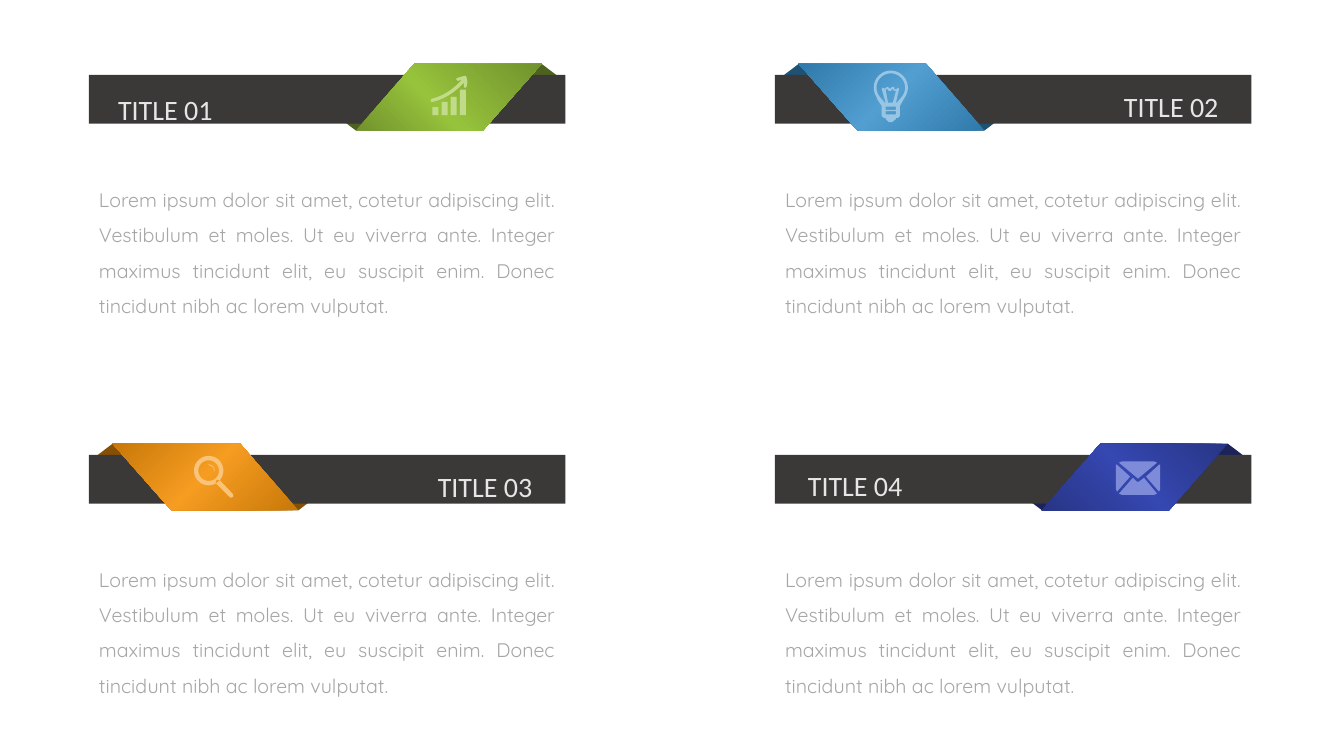
"""Build a slide of four titled banners with folded ribbons, icons and text."""
from copy import deepcopy
from dataclasses import dataclass
from math import cos, radians, sin

from lxml.etree import SubElement
from pptx import Presentation
from pptx.dml.color import RGBColor
from pptx.enum.shapes import MSO_SHAPE
from pptx.enum.text import MSO_ANCHOR, MSO_AUTO_SIZE, PP_ALIGN
from pptx.oxml.ns import qn
from pptx.util import Cm, Pt

Point = tuple[float, float]
Contour = list[Point]

LOREM = ("Lorem ipsum dolor sit amet, cotetur adipiscing elit. Vestibulum et moles. "
         "Ut eu viverra ante. Integer maximus tincidunt elit, eu suscipit enim. "
         "Donec tincidunt nibh ac lorem vulputat.")
COLUMNS = (2.24, 19.53)
ROWS = (1.89, 11.46)
BAR_W, BAR_H = 12.01, 1.23
RIBBON = [(0.6, -0.28), (3.81, -0.28), (5.28, 1.4), (2.08, 1.4)]
UPPER_FOLD = [(0.6, -0.28), (1.34, -0.28), (0.96, 0), (0.23, 0)]
LOWER_FOLD = [(5.88 - x, 1.12 - y) for x, y in UPPER_FOLD]


def arc(cx: float, cy: float, r: float, start: int, end: int) -> Contour:
    """Return points along a circular arc, clockwise when end exceeds start."""
    step = 6 if end > start else -6
    return [(cx + r * cos(radians(a)), cy + r * sin(radians(a)))
            for a in range(start, end + step, step)]


def curve(start: Point, control: Point, end: Point) -> Contour:
    """Return points along a quadratic curve."""
    ts = [i / 10 for i in range(11)]
    return [tuple((1 - t) ** 2 * a + 2 * t * (1 - t) * b + t * t * c
                  for a, b, c in zip(start, control, end)) for t in ts]


def box(x: float, y: float, w: float, h: float) -> Contour:
    """Return the corners of a rectangle."""
    return [(x, y), (x, y + h), (x + w, y + h), (x + w, y)]


CHART = [box(0.05 + 0.23 * i, 0.99 - h, 0.15, h)
         for i, h in enumerate((0.2, 0.33, 0.46, 0.64))] + [
    [(0.91, 0.05), (0.89, 0), (0.86, 0), (0.69, 0.05), (0.64, 0.08), (0.69, 0.13)]
    + curve((0.79, 0.1), (0.45, 0.48), (0.03, 0.58))
    + [(0, 0.63), (0.03, 0.66)]
    + curve((0.05, 0.66), (0.48, 0.56), (0.84, 0.18))
    + [(0.84, 0.23), (0.84, 0.3), (0.89, 0.3), (0.91, 0.28), (0.93, 0.15)]]
BULB = [
    arc(0.43, 0.43, 0.43, 144, 396)
    + [(0.76, 0.71), (0.66, 0.89), (0.66, 1.14), (0.61, 1.19), (0.56, 1.19),
       (0.56, 1.22), (0.46, 1.3), (0.38, 1.3), (0.3, 1.22), (0.3, 1.19),
       (0.25, 1.19), (0.2, 1.14), (0.2, 0.89), (0.08, 0.71)],
    arc(0.43, 0.43, 0.36, 396, 144)
    + [(0.15, 0.66), (0.28, 0.81), (0.3, 0.81), (0.2, 0.46), (0.23, 0.43),
       (0.28, 0.46), (0.33, 0.41), (0.38, 0.43), (0.42, 0.46), (0.46, 0.41),
       (0.51, 0.41), (0.53, 0.48), (0.58, 0.46), (0.61, 0.43), (0.64, 0.46),
       (0.56, 0.81), (0.58, 0.81)],
    [(0.36, 0.81), (0.48, 0.81), (0.56, 0.51), (0.51, 0.51), (0.48, 0.46),
     (0.43, 0.51), (0.38, 0.51), (0.33, 0.46), (0.3, 0.48)],
    box(0.3, 0.91, 0.26, 0.08), box(0.3, 1.02, 0.26, 0.08)]
LENS = [
    arc(0.37, 0.37, 0.37, 0, 354), arc(0.37, 0.37, 0.26, 354, 0),
    [(0.54, 0.68), (0.56, 0.61), (0.64, 0.6), (0.98, 0.96), (0.99, 1.02),
     (0.95, 1.05), (0.9, 1.04)],
    curve((0.34, 0.21), (0.53, 0.22), (0.52, 0.4)) + [(0.48, 0.28)]]
SIDE = [(1.12, 0.08), (1.12, 0.69), (1.09, 0.76), (0.76, 0.38), (1.09, 0.08)]
ENVELOPE = [
    SIDE, [(1.12 - x, y) for x, y in SIDE],
    [(0.56, 0.43), (1.04, 0.03), (0.97, 0), (0.15, 0), (0.08, 0.03)],
    [(0.71, 0.41), (0.58, 0.51), (0.53, 0.51), (0.43, 0.41), (0.08, 0.81),
     (0.15, 0.84), (0.97, 0.84), (1.04, 0.81)]]


@dataclass
class Panel:
    """Describe one banner, with title and icon placed relative to its bar."""
    title: str
    column: int
    row: int
    ribbon_right: bool
    title_at: Point
    edge: str
    middle: str
    middle_at: float
    angle: int
    fold: str
    icon: list[Contour]
    icon_at: Point
    icon_color: str


PANELS = [
    Panel("TITLE 01", 0, 0, True, (0.48, 0.24), "71922D", "97C33C", 0.42, 45,
          "4C621E", CHART, (8.61, 0.02), "C1DB8A"),
    Panel("TITLE 02", 1, 0, False, (4.57, 0.17), "2F7AAB", "539ED0", 0.51, 135,
          "1F5172", BULB, (2.49, -0.11), "98C5E3"),
    Panel("TITLE 03", 0, 1, False, (4.57, 0.17), "C87809", "F59C21", 0.51, 135,
          "855006", LENS, (2.65, 0.03), "F9C47A"),
    Panel("TITLE 04", 1, 1, True, (0.58, 0.15), "283585", "3547B1", 0.51, 225,
          "1B2358", ENVELOPE, (8.59, 0.17), "7E8BD8"),
]


def rgb(color: str) -> RGBColor:
    """Turn a hex string into a colour."""
    return RGBColor.from_string(color)


def paint(sp, color: str) -> None:
    """Give a shape a plain fill without line or shadow."""
    sp.shadow.inherit = False
    sp.line.fill.background()
    sp.fill.solid()
    sp.fill.fore_color.rgb = rgb(color)


def add_outline(s, contours: list[Contour], x: float, y: float, color: str):
    """Draw closed contours as one freeform offset by x and y."""
    placed = [[(Cm(x + px), Cm(y + py)) for px, py in c] for c in contours]
    builder = s.shapes.build_freeform(*placed[0][0])
    for i, points in enumerate(placed):
        if i:
            builder.move_to(*points[0])
        builder.add_line_segments(points[1:], close=True)
    sp = builder.convert_to_shape()
    paint(sp, color)
    return sp


def apply_gradient(sp, panel: Panel) -> None:
    """Fill a ribbon with its three-stop gradient."""
    sp.fill.gradient()
    sp.fill.gradient_angle = panel.angle
    stops = sp.element.find(".//" + qn("a:gsLst"))
    stops.append(deepcopy(stops[0]))
    looks = ((0, panel.edge), (panel.middle_at, panel.middle), (1, panel.edge))
    for stop, (position, color) in zip(sp.fill.gradient_stops, looks):
        stop.position = position
        stop.color.rgb = rgb(color)


def set_text(sp, text: str, at: Point, size: Point, align: PP_ALIGN,
             font: str, points: int, color: str) -> None:
    """Place a text shape and format its single paragraph."""
    sp.left, sp.top = (Cm(v) for v in at)
    sp.width, sp.height = (Cm(v) for v in size)
    tf = sp.text_frame
    tf.text = text
    tf.word_wrap = True
    tf.auto_size = MSO_AUTO_SIZE.NONE
    tf.vertical_anchor = MSO_ANCHOR.MIDDLE
    p = tf.paragraphs[0]
    p.alignment = align
    p.line_spacing = 1.5
    p.space_before = Pt(0)
    properties = p._p.get_or_add_pPr()
    properties.set("marL", "0")
    properties.set("indent", "0")
    SubElement(properties, qn("a:buNone"))
    p.font.name, p.font.size, p.font.bold = font, Pt(points), False
    p.font.color.rgb = rgb(color)


def add_panel(s, panel: Panel, body, title=None) -> None:
    """Draw one banner with its ribbon, title, icon and paragraph."""
    x, y = COLUMNS[panel.column], ROWS[panel.row]
    set_text(body, LOREM, (x, y + 2.35), (BAR_W, 3.96), PP_ALIGN.JUSTIFY,
             "Quicksand", 14, "A6A6A6")
    upper, lower, ribbon = ([(BAR_W - px if panel.ribbon_right else px, py)
                             for px, py in c] for c in (UPPER_FOLD, LOWER_FOLD, RIBBON))
    for fold in (upper, lower):
        add_outline(s, [fold], x, y, panel.fold)
    bar = s.shapes.add_shape(MSO_SHAPE.RECTANGLE, Cm(x), Cm(y), Cm(BAR_W), Cm(BAR_H))
    paint(bar, "3B3838")
    apply_gradient(add_outline(s, [ribbon], x, y, panel.edge), panel)
    title = title or s.shapes.add_textbox(0, 0, 0, 0)
    s.shapes.element.append(title.element)
    dx, dy = panel.title_at
    set_text(title, panel.title, (x + dx, y + dy), (6.86, 0.84),
             PP_ALIGN.LEFT if panel.ribbon_right else PP_ALIGN.RIGHT,
             "Calibri", 20, "E7E6E6")
    dx, dy = panel.icon_at
    add_outline(s, panel.icon, x + dx, y + dy, panel.icon_color)


def main() -> None:
    """Build and save the slide."""
    prs = Presentation()
    prs.slide_width, prs.slide_height = Cm(33.87), Cm(19.05)
    s = prs.slides.add_slide(prs.slide_layouts.get_by_name("Comparison"))
    title, *bodies = s.placeholders
    for panel, body in zip(PANELS, bodies):
        add_panel(s, panel, body, title if panel is PANELS[0] else None)
    prs.save("out.pptx")


if __name__ == "__main__":
    main()
